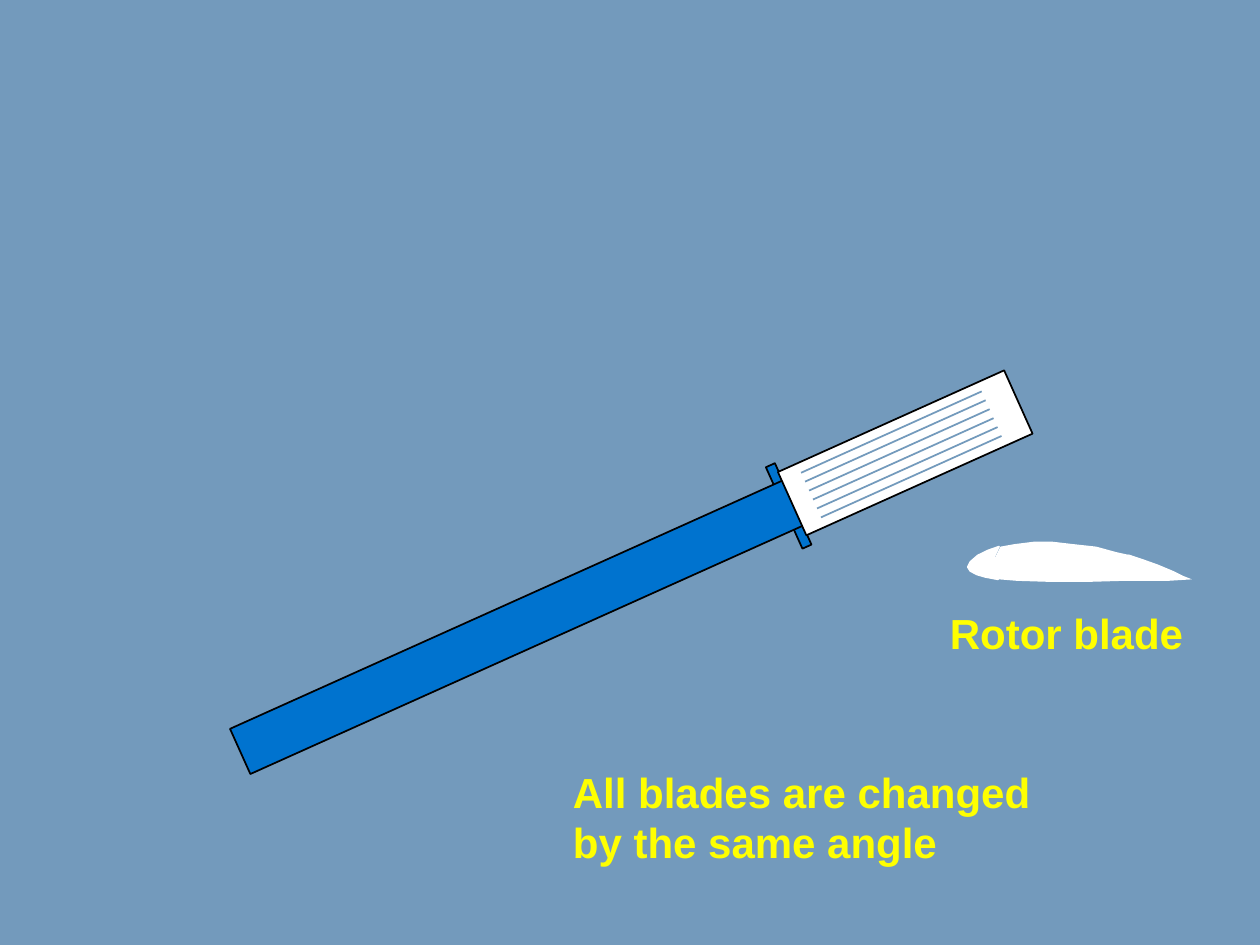
from dataclasses import dataclass

from lxml.etree import SubElement
from pptx import Presentation
from pptx.dml.color import RGBColor
from pptx.enum.shapes import MSO_CONNECTOR as Connector, MSO_SHAPE as Shape
from pptx.oxml.ns import qn
from pptx.util import Cm, Pt


@dataclass(frozen=True)
class Theme:
    sky: RGBColor = RGBColor(0x73, 0x9A, 0xBC)
    steel: RGBColor = RGBColor(0x00, 0x73, 0xCF)
    blade: RGBColor = RGBColor(0xFF, 0xFF, 0xFF)
    edge: RGBColor = RGBColor(0x00, 0x00, 0x00)
    label: RGBColor = RGBColor(0xFF, 0xFF, 0x00)
    font: str = "Arial"
    label_size: Pt = Pt(24)
    line: Pt = Pt(1)


THEME = Theme()
TILT = -24.2
GROOVES = 6

AIRFOIL_TAIL = [
    (22.76, 11.18), (23.06, 11.28), (23.34, 11.38), (23.65, 11.51),
    (23.85, 11.61), (24.03, 11.68), (23.55, 11.71), (22.66, 11.71),
    (22.58, 11.61), (22.56, 11.48), (22.61, 11.3), (22.68, 11.2),
]
AIRFOIL_BODY = [
    (22.81, 11.2), (22.63, 11.3), (22.58, 11.51), (22.66, 11.71),
    (21.97, 11.73), (21.13, 11.73), (20.5, 11.71), (20.14, 11.68),
    (20.04, 11.61), (19.99, 11.46), (20.04, 11.28), (20.17, 11.02),
    (20.45, 10.97), (20.85, 10.92), (21.21, 10.92), (21.64, 10.97),
    (22.1, 11.02), (22.5, 11.13),
]
AIRFOIL_NOSE = [
    (20.14, 11.02), (20.04, 11.23), (20.02, 11.43), (20.04, 11.61),
    (20.12, 11.68), (19.86, 11.63), (19.69, 11.58), (19.56, 11.51),
    (19.51, 11.43), (19.56, 11.33), (19.71, 11.2), (19.91, 11.1),
]


def paint(shape, fill, line=None):
    shape.shadow.inherit = False
    shape.fill.solid()
    shape.fill.fore_color.rgb = fill
    if line is None:
        shape.line.fill.background()
    else:
        shape.line.color.rgb = line
        shape.line.width = THEME.line


def add_airfoil_part(page, points, line=None):
    start, *rest = [(Cm(x), Cm(y)) for x, y in points]
    builder = page.shapes.build_freeform(*start)
    builder.add_line_segments(rest, close=True)
    paint(builder.convert_to_shape(), THEME.blade, line)


def add_tilted_bar(page, center_x, center_y, width, height, fill):
    bar = page.shapes.add_shape(
        Shape.RECTANGLE, Cm(center_x - width / 2), Cm(center_y - height / 2),
        Cm(width), Cm(height))
    bar.rotation = TILT
    paint(bar, fill, THEME.edge)


def add_groove(page, x, y):
    groove = page.shapes.add_connector(
        Connector.STRAIGHT, Cm(x), Cm(y), Cm(x + 3.64), Cm(y - 1.64))
    groove.line.color.rgb = THEME.sky
    groove.line.width = THEME.line
    SubElement(groove._element.spPr, qn("a:effectLst"))


def add_label(page, text, left, top, width, height):
    box = page.shapes.add_textbox(Cm(left), Cm(top), Cm(width), Cm(height))
    box.text_frame.word_wrap = True
    span = box.text_frame.paragraphs[0].add_run()
    span.text = text
    span.font.name = THEME.font
    span.font.size = THEME.label_size
    span.font.bold = True
    span.font.color.rgb = THEME.label


def main():
    deck = Presentation()
    deck.slide_width, deck.slide_height = Cm(25.4), Cm(19.05)
    page = deck.slides.add_slide(deck.slide_layouts[6])
    page.background.fill.solid()
    page.background.fill.fore_color.rgb = THEME.sky

    add_airfoil_part(page, AIRFOIL_TAIL)
    add_airfoil_part(page, AIRFOIL_BODY)
    add_airfoil_part(page, AIRFOIL_NOSE, THEME.blade)
    add_label(page, "All blades are changed by the same angle", 11.3, 15.32, 10.21, 2.31)

    add_tilted_bar(page, 15.9, 10.2, 0.2, 1.8, THEME.steel)
    add_tilted_bar(page, 12.14, 11.87, 16, 1, THEME.steel)
    add_tilted_bar(page, 18.25, 9.13, 5, 1.4, THEME.blade)
    for index in range(GROOVES):
        add_groove(page, 16.15 + 0.08 * index, 9.53 + 0.18 * index)

    add_label(page, "Rotor blade", 18.9, 12.12, 5.59, 1.27)
    deck.save("out.pptx")


if __name__ == "__main__":
    main()
